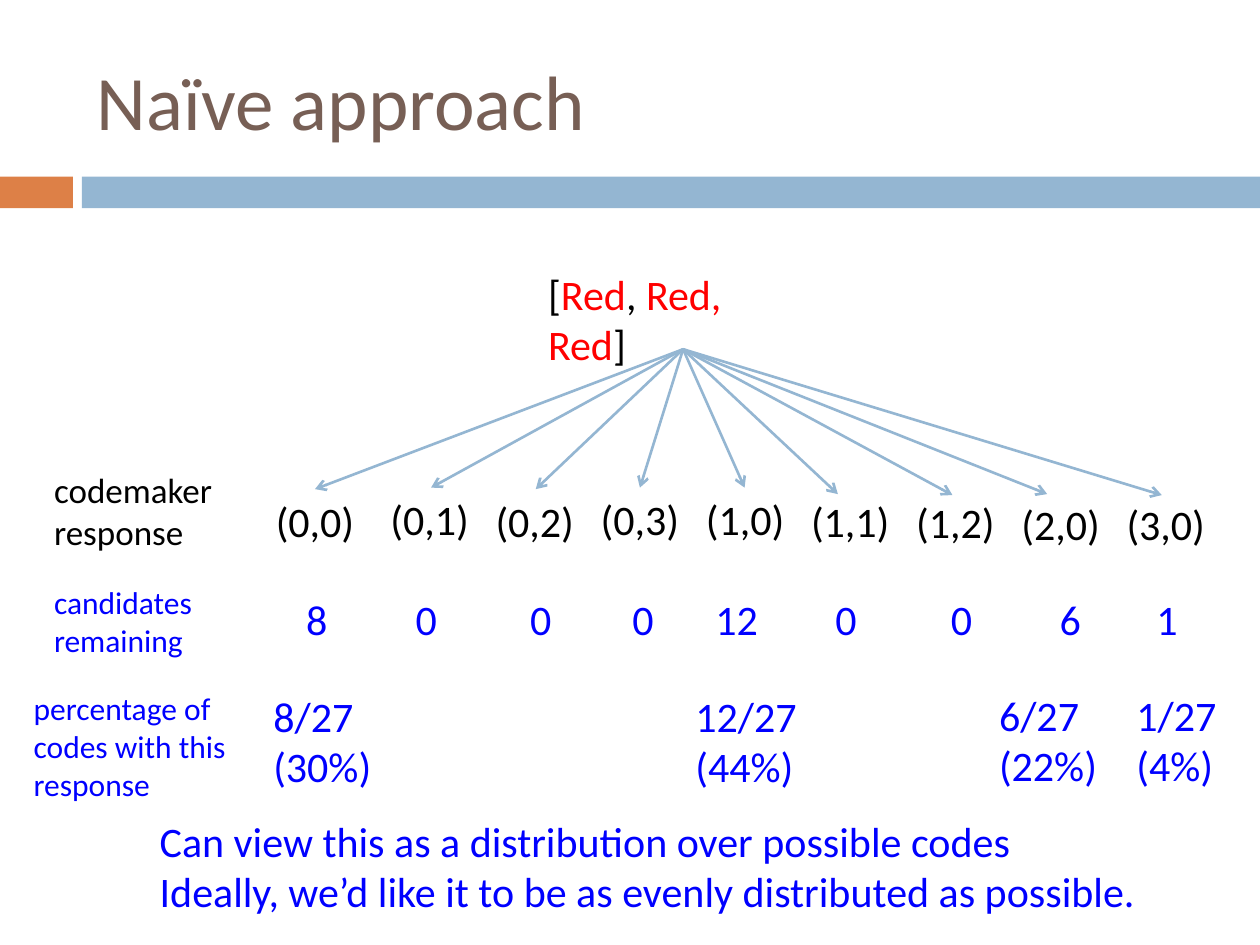
from dataclasses import dataclass
from typing import Any

from lxml.etree import SubElement
from pptx import Presentation
from pptx.dml.color import RGBColor
from pptx.enum.shapes import MSO_CONNECTOR as Connector, MSO_SHAPE as Preset
from pptx.enum.text import MSO_ANCHOR as Anchor, MSO_AUTO_SIZE as AutoSize, PP_ALIGN as Align
from pptx.oxml.ns import qn
from pptx.util import Cm, Pt

BLACK, RED, BLUE = "000000", "FF0000", "0000FF"
BROWN, ORANGE, SKY = "775F55", "DD8047", "94B6D2"
TOTAL_CODES = 27
FAN_ORIGIN = (13.77, 7.04)
FIRST_RESPONSE, SECOND_RESPONSE, RESPONSE_PITCH = 5.31, 7.62, 2.12

# response, its top, arrow tip, candidates remaining, left of that count
RESPONSES = [
    ("(0,0)", 9.86, (6.35, 9.86), 8, 5.92),
    ("(0,1)", 9.83, (8.69, 9.83), 0, 8.13),
    ("(0,2)", 9.86, (10.8, 9.86), 0, 10.44),
    ("(0,3)", 9.83, (12.9, 9.83), 0, 12.5),
    ("(1,0)", 9.83, (15.01, 9.83), 12, 14.17),
    ("(1,1)", 9.86, (16.89, 9.96), 0, 16.59),
    ("(1,2)", 9.88, (19.2, 9.98), 0, 18.92),
    ("(2,0)", 9.93, (21.11, 9.96), 6, 21.11),
    ("(3,0)", 9.93, (23.42, 9.98), 1, 23.06),
]
# candidates remaining: left, top and width of their share
SHARES = {
    8: (5.26, 13.79, 2.64),
    12: (13.77, 13.79, 2.82),
    6: (19.89, 13.77, 2.64),
    1: (22.66, 13.77, 2.36),
}
ROW_LABELS = [
    ("codemaker response", (0.84, 9.32, 5.31, 1.96), 20, BLACK),
    ("candidates remaining", (0.84, 11.63, 3.63, 1.8), 18, BLUE),
    ("percentage of codes with this response", (0.43, 13.77, 4.65, 2.57), 18, BLUE),
]


def rgb(color):
    return RGBColor.from_string(color)


def cm(lengths):
    return [Cm(length) for length in lengths]


@dataclass
class SlideBuilder:
    slide: Any
    font: str = "Calibri"
    size: int = 24

    def style(self, run, color, size=None):
        run.font.name = self.font
        run.font.size = Pt(size or self.size)
        run.font.color.rgb = rgb(color)

    def title(self, text, box, color):
        heading = self.slide.shapes.title
        heading.left, heading.top, heading.width, heading.height = cm(box)
        frame = heading.text_frame
        frame.text = text
        frame.vertical_anchor = Anchor.MIDDLE
        frame.paragraphs[0].alignment = Align.LEFT
        self.style(frame.paragraphs[0].runs[0], color, 44)

    def band(self, box, color):
        bar = self.slide.shapes.add_shape(Preset.RECTANGLE, *cm(box))
        bar.shadow.inherit = False
        bar.fill.solid()
        bar.fill.fore_color.rgb = rgb(color)
        bar.line.fill.background()

    def frame(self, box, wrap):
        frame = self.slide.shapes.add_textbox(*cm(box)).text_frame
        frame.word_wrap = wrap
        frame.auto_size = AutoSize.SHAPE_TO_FIT_TEXT
        return frame

    def text(self, text, box, color, size=None, wrap=False):
        frame = self.frame(box, wrap)
        frame.text = text
        for paragraph in frame.paragraphs:
            for run in paragraph.runs:
                self.style(run, color, size)

    def colored_text(self, parts, box):
        """Write one paragraph from (text, color) parts."""
        paragraph = self.frame(box, True).paragraphs[0]
        for text, color in parts:
            run = paragraph.add_run()
            run.text = text
            self.style(run, color)

    def arrow(self, start, tip, color):
        arrow = self.slide.shapes.add_connector(Connector.STRAIGHT, *cm(start + tip))
        arrow.line.color.rgb = rgb(color)
        arrow.line.width = Pt(1.5)
        SubElement(arrow.line._get_or_add_ln(), qn("a:tailEnd"), type="arrow")
        SubElement(arrow._element.spPr, qn("a:effectLst"))


def main():
    deck = Presentation()
    deck.slide_width, deck.slide_height = Cm(25.4), Cm(19.05)
    builder = SlideBuilder(deck.slides.add_slide(deck.slide_layouts[5]))

    builder.band((0, 3.56, 1.47, 0.64), ORANGE)
    builder.band((1.65, 3.56, 23.75, 0.64), SKY)
    builder.title("Naïve approach", (1.7, 0.64, 22.66, 2.74), BROWN)

    guess = [("[", BLACK), ("Red", RED), (", ", BLACK), ("Red, Red", RED), ("]", BLACK)]
    builder.colored_text(guess, (10.8, 5.28, 5.46, 1.27))

    for column, (response, top, tip, count, count_left) in enumerate(RESPONSES):
        left = SECOND_RESPONSE + (column - 1) * RESPONSE_PITCH if column else FIRST_RESPONSE
        builder.text(response, (left, top, 2.11, 1.27), BLACK)
        builder.arrow(FAN_ORIGIN, tip, SKY)
        count_width = 1.45 if count > 9 else 0.99
        builder.text(str(count), (count_left, 11.84, count_width, 1.27), BLUE)
        if count:
            share = f"{count}/{TOTAL_CODES}\n({count / TOTAL_CODES:.0%})"
            builder.text(share, (*SHARES[count], 2.31), BLUE)

    for label, box, size, color in ROW_LABELS:
        builder.text(label, box, color, size, wrap=True)

    builder.text(
        "Can view this as a distribution over possible codes\n"
        "Ideally, we’d like it to be as evenly distributed as possible.",
        (2.97, 16.31, 20.37, 2.31), BLUE)

    deck.save("out.pptx")


if __name__ == "__main__":
    main()
